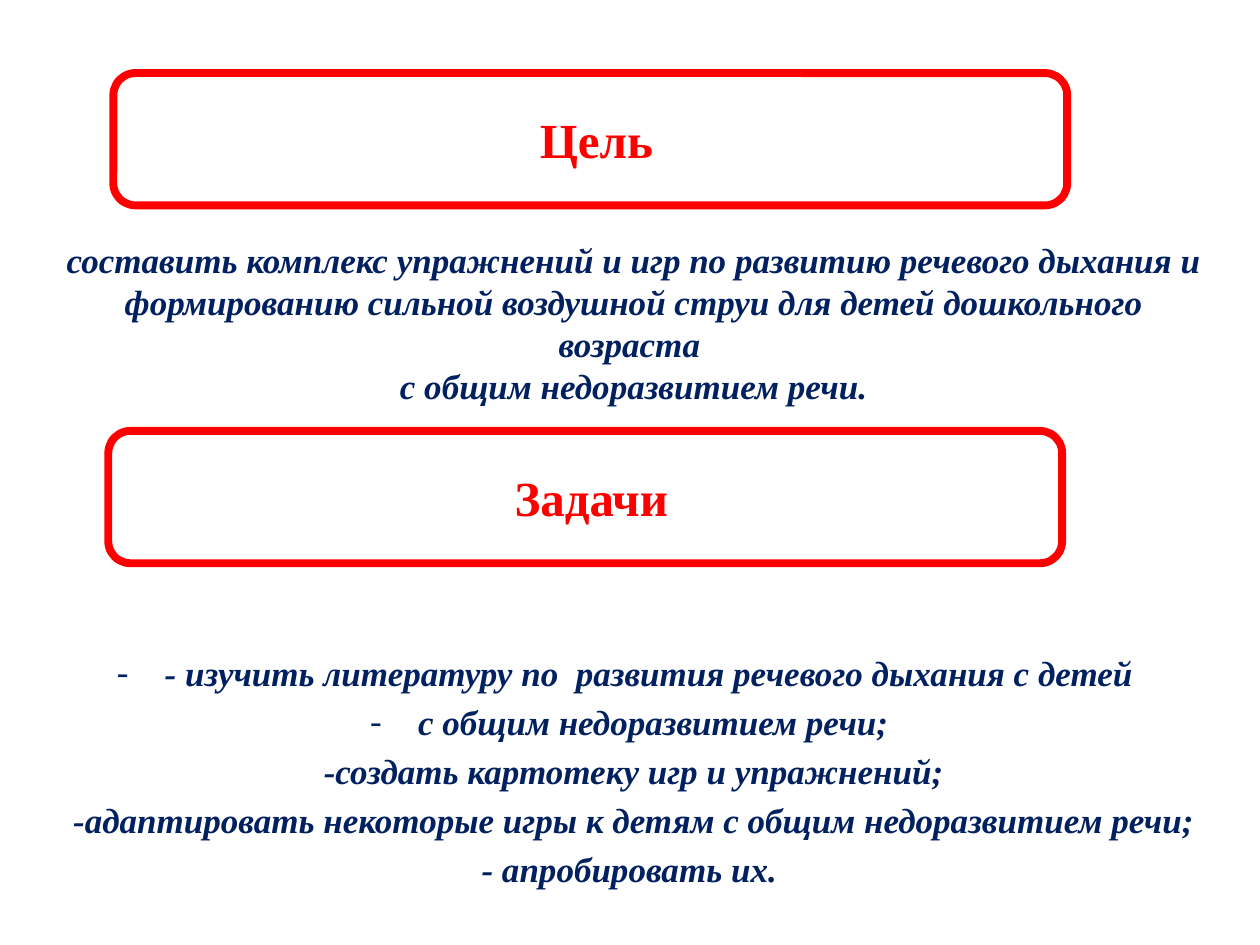
"""Builds the slide that states the goal and the tasks."""
import lxml.etree
import pptx
import pptx.dml.color
import pptx.enum.shapes
import pptx.enum.text
import pptx.oxml.ns
import pptx.util
from pptx.util import Inches

FACE = "Times New Roman"
RED, NAVY, WHITE = "FF0000", "002060", "FFFFFF"
GOAL = [
    ("составить комплекс упражнений и игр по развитию речевого дыхания и "
     "формированию сильной воздушной струи для детей дошкольного возраста ", 0.07, 0, False),
    ("с общим недоразвитием речи.", 0.07, 0, False),
]
TASKS = [
    ("- изучить литературу по  развития речевого дыхания с детей ", 0.38, -0.38, True),
    ("с общим недоразвитием речи;", 0.38, -0.38, True),
    ("-создать картотеку игр и упражнений;", 0.07, 0, False),
    ("-адаптировать некоторые игры к детям с общим недоразвитием речи;", 0.07, 0, False),
    ("- апробировать их.", 0.07, -0.2, False),
]


def color(value):
    """Return the colour for a hex string."""
    return pptx.dml.color.RGBColor.from_string(value)


def set_font(paragraph, size, ink, italic=False):
    """Centre a paragraph and give it its bold font."""
    paragraph.alignment = pptx.enum.text.PP_ALIGN.CENTER
    font = paragraph.font
    font.name, font.size = FACE, pptx.util.Pt(size)
    font.bold, font.italic = True, italic
    font.color.rgb = color(ink)


def set_indent(paragraph, margin, indent, dashed):
    """Set the margin, first-line indent and optional dash bullet."""
    properties = paragraph._p.get_or_add_pPr()
    properties.set("marL", str(Inches(margin)))
    properties.set("indent", str(Inches(indent)))
    if dashed:
        qn = pptx.oxml.ns.qn
        lxml.etree.SubElement(properties, qn("a:buFont"), typeface=FACE)
        lxml.etree.SubElement(properties, qn("a:buChar"), char="-")


def add_heading(slide, left, top, text):
    """Add a red-framed rounded heading."""
    frame = slide.shapes.add_shape(
        pptx.enum.shapes.MSO_SHAPE.ROUNDED_RECTANGLE,
        Inches(left), Inches(top), Inches(7.57), Inches(1.05))
    frame.shadow.inherit = False
    frame.fill.solid()
    frame.fill.fore_color.rgb = color(WHITE)
    frame.line.color.rgb = color(RED)
    frame.line.width = pptx.util.Pt(4.5)
    frame.text_frame.vertical_anchor = pptx.enum.text.MSO_ANCHOR.MIDDLE
    heading = frame.text_frame.paragraphs[0]
    heading.text = text
    set_font(heading, 28, RED)


def add_statements(slide, top, height, statements, gap):
    """Add centred italic statements, with a gap in points between them."""
    body = slide.shapes.add_textbox(
        Inches(0.33), Inches(top), Inches(9.33), Inches(height)).text_frame
    body.word_wrap = True
    body.margin_top = body.margin_bottom = 0
    for number, (text, margin, indent, dashed) in enumerate(statements):
        statement = body.add_paragraph() if number else body.paragraphs[0]
        statement.text = text
        set_indent(statement, margin, indent, dashed)
        statement.line_spacing = pptx.util.Pt(24)
        statement.space_before = pptx.util.Pt(gap if number else 0)
        set_font(statement, 20, NAVY, italic=True)


def main():
    """Build and save the slide."""
    deck = pptx.Presentation()
    deck.slide_width, deck.slide_height = Inches(10), Inches(7.5)
    slide = deck.slides.add_slide(deck.slide_layouts[6])
    add_statements(slide, 1.89, 1.35, GOAL, 0)
    add_statements(slide, 5.17, 2, TASKS, 4)
    add_heading(slide, 0.9, 0.58, " Цель")
    add_heading(slide, 0.86, 3.42, " Задачи")
    deck.save("out.pptx")


if __name__ == "__main__":
    main()
